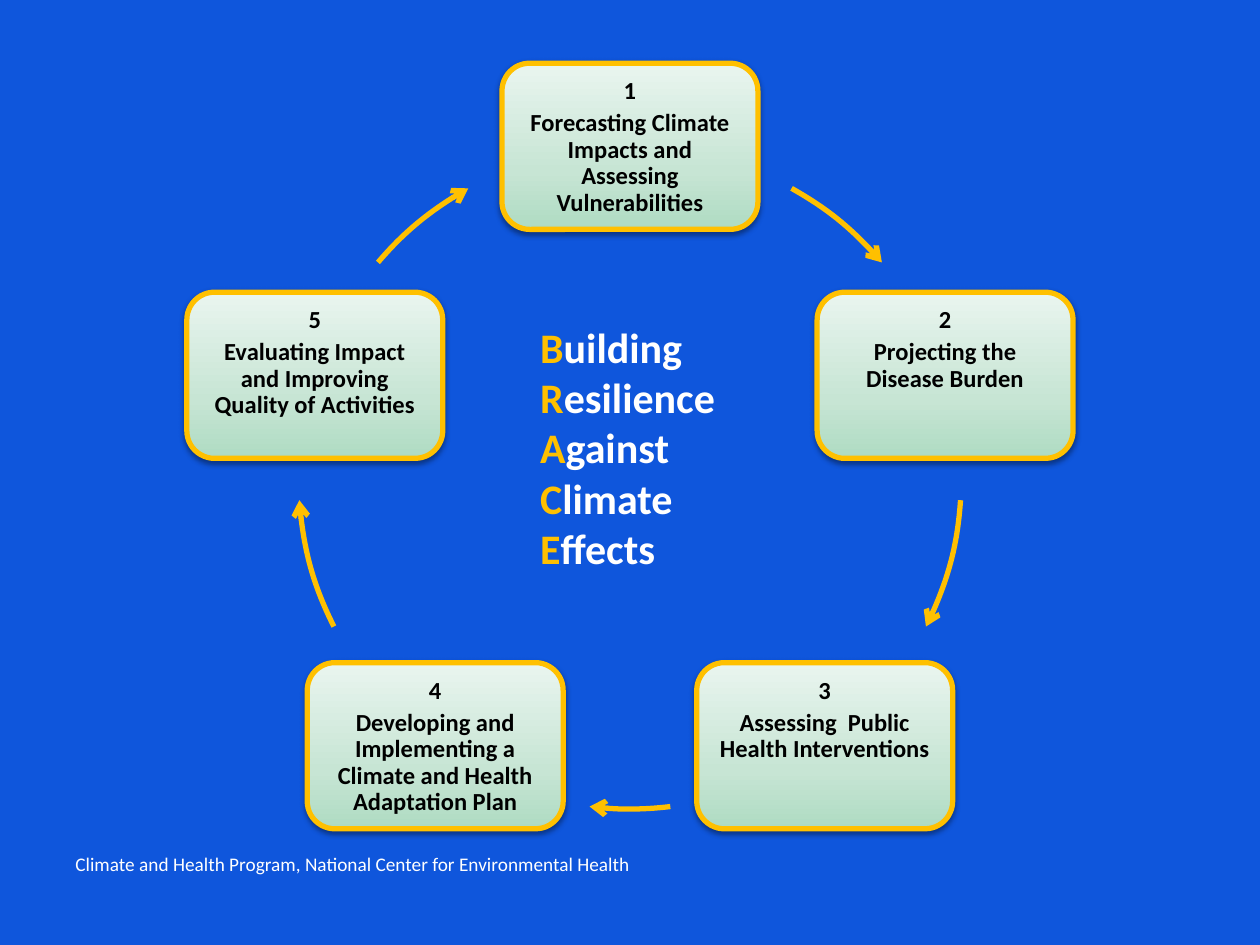
from copy import deepcopy
from math import cos, radians, sin

from lxml import etree
from pptx import Presentation
from pptx.dml.color import RGBColor
from pptx.enum.shapes import MSO_SHAPE
from pptx.enum.text import MSO_ANCHOR, PP_ALIGN
from pptx.oxml import parse_xml
from pptx.oxml.ns import nsdecls, qn
from pptx.util import Cm, Pt

ROUND_RECT = MSO_SHAPE.ROUNDED_RECTANGLE
ARC = MSO_SHAPE.ARC
CENTER = PP_ALIGN.CENTER
TOP, BOTTOM = MSO_ANCHOR.TOP, MSO_ANCHOR.BOTTOM

FONT = "Calibri"
COLORS = {
    "background": "0F56DC",
    "gold": "FFC000",
    "white": "FFFFFF",
    "black": "000000",
}
GRADIENT = [(0, "AEDBC2"), (0.35, "C7E5D4"), (1, "E9F5EF")]

STEPS = [
    "Forecasting Climate Impacts and Assessing Vulnerabilities",
    "Projecting the Disease Burden",
    "Assessing  Public Health Interventions",
    "Developing and Implementing a Climate and Health Adaptation Plan",
    "Evaluating Impact and Improving Quality of Activities",
]
ARROW_ANGLES = [(299.2, 319.5), (3.9, 26.7), (83, 97), (153.3, 176.1), (220.5, 240.8)]
ACRONYM = ["Building", "Resilience", "Against", "Climate", "Effects"]


def rgb(name):
    return RGBColor.from_string(COLORS[name])


def add_run(p, text, size, color, bold=False):
    r = p.add_run()
    r.text = text
    r.font.name = FONT
    r.font.size = Pt(size)
    r.font.bold = bold
    r.font.color.rgb = rgb(color)


def set_gradient(sp):
    sp.fill.gradient()
    sp.fill.gradient_angle = 90
    stops = sp._element.spPr.find(qn("a:gradFill")).find(qn("a:gsLst"))
    stops.append(deepcopy(stops[0]))
    for stop, (position, color) in zip(sp.fill.gradient_stops, GRADIENT):
        stop.position = position
        stop.color.rgb = RGBColor.from_string(color)


def set_shadow(sp):
    sp.shadow.inherit = False
    effects = sp._element.spPr.find(qn("a:effectLst"))
    effects.append(parse_xml(
        f'<a:outerShdw {nsdecls("a")} blurRad="{Pt(3.1)}" dist="{Pt(1.6)}" '
        'dir="5400000" rotWithShape="0">'
        f'<a:srgbClr val="{COLORS["black"]}"><a:alpha val="38000"/></a:srgbClr>'
        '</a:outerShdw>'))


def set_outline(sp):
    sp.line.color.rgb = rgb("gold")
    sp.line.width = Pt(3)


def add_step(s, left, top, width, height, number, text):
    sp = s.shapes.add_shape(ROUND_RECT, left, top, width, height)
    set_gradient(sp)
    set_outline(sp)
    set_shadow(sp)
    tf = sp.text_frame
    tf.word_wrap = True
    tf.vertical_anchor = TOP
    tf.margin_left = tf.margin_right = tf.margin_top = tf.margin_bottom = Cm(0.15)
    for i, line in enumerate((str(number), text)):
        p = tf.add_paragraph() if i else tf.paragraphs[0]
        p.alignment = CENTER
        p.line_spacing = 0.9
        p.space_after = Pt(3)
        add_run(p, line, 14, "black", True)


def add_arrow(s, left, top, size, start, end):
    sp = s.shapes.add_shape(ARC, left, top, size, size)
    sp.adjustments[0] = start * 0.6
    sp.adjustments[1] = end * 0.6
    sp.fill.background()
    set_outline(sp)
    sp.shadow.inherit = False
    etree.SubElement(sp.line._get_or_add_ln(), qn("a:tailEnd"), type="arrow")


def add_cycle(s, left, top, size):
    radius = size / 2
    width, height = Cm(5.16), Cm(3.35)
    for i, (text, angles) in enumerate(zip(STEPS, ARROW_ANGLES)):
        angle = radians(360 / len(STEPS) * i - 90)
        x = left + radius + radius * cos(angle) - width / 2
        y = top + radius + radius * sin(angle) - height / 2
        add_step(s, int(x), int(y), width, height, i + 1, text)
        add_arrow(s, left, top, size, *angles)


def add_acronym(s, left, top, width, height):
    tf = s.shapes.add_textbox(left, top, width, height).text_frame
    tf.word_wrap = True
    p = tf.paragraphs[0]
    for i, word in enumerate(ACRONYM):
        if i:
            p.add_line_break()
        add_run(p, word[0], 24, "gold", True)
        add_run(p, word[1:], 24, "white", True)


def add_credit(s, left, top, width, height):
    tf = s.shapes.add_textbox(left, top, width, height).text_frame
    tf.word_wrap = True
    tf.vertical_anchor = BOTTOM
    add_run(tf.paragraphs[0],
            "Climate and Health Program, National Center for Environmental Health",
            11, "white")


def main():
    prs = Presentation()
    prs.slide_width, prs.slide_height = Cm(25.4), Cm(19.05)
    s = prs.slides.add_slide(prs.slide_layouts[6])
    s.background.fill.solid()
    s.background.fill.fore_color.rgb = rgb("background")
    add_cycle(s, Cm(6.02), Cm(2.95), Cm(13.36))
    add_acronym(s, Cm(10.64), Cm(6.35), Cm(4.6), Cm(5.51))
    add_credit(s, Cm(1.27), Cm(16.08), Cm(22.86), Cm(1.7))
    prs.save("out.pptx")


if __name__ == "__main__":
    main()
